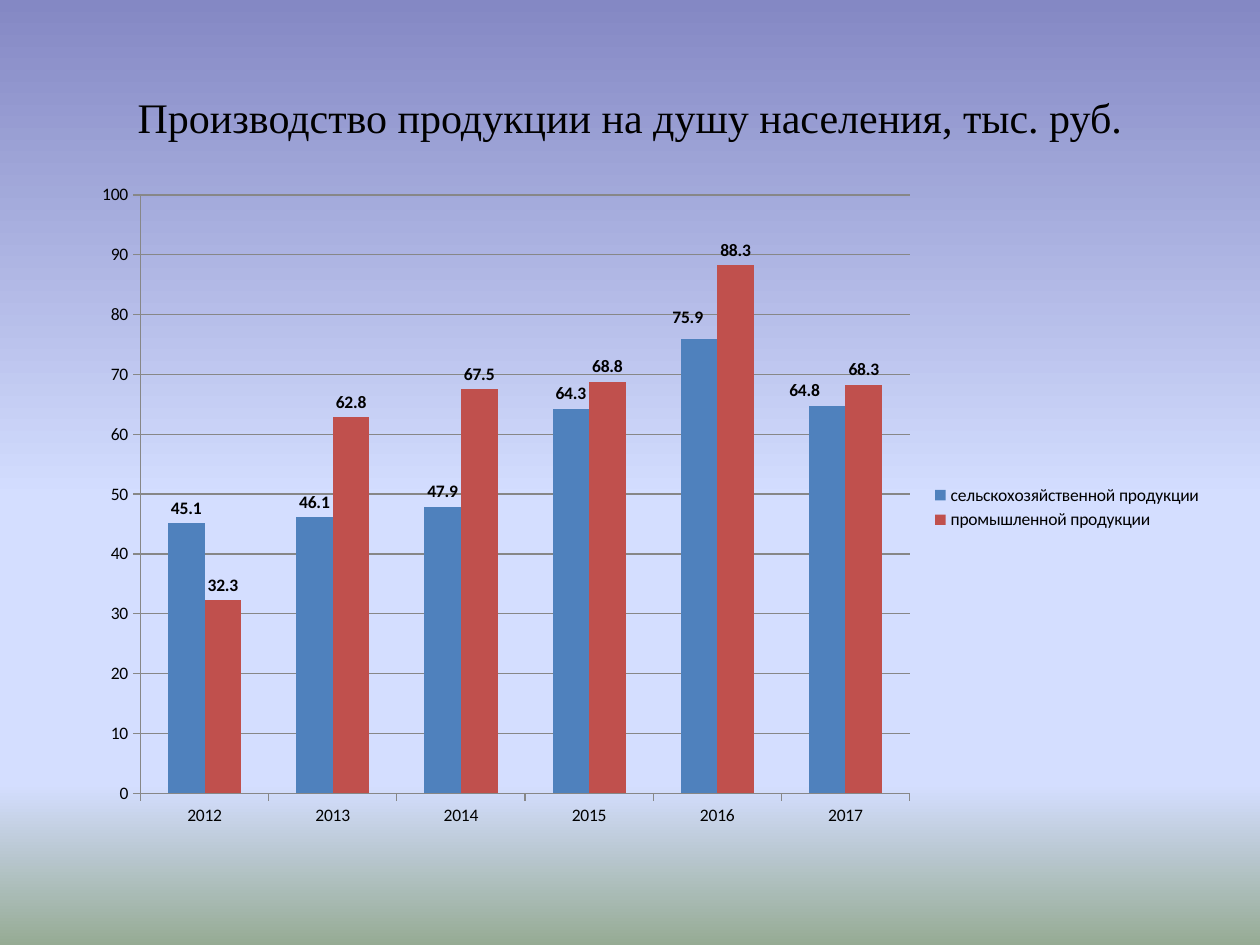
from dataclasses import dataclass, field

import lxml.etree
import pptx
import pptx.chart.data
import pptx.dml.color
import pptx.enum.chart
import pptx.enum.text
import pptx.oxml.ns
import pptx.util

RGBColor = pptx.dml.color.RGBColor
qn = pptx.oxml.ns.qn

PX = 914400 // 126
BLACK = RGBColor(0x00, 0x00, 0x00)
BLUE = RGBColor(0x4F, 0x81, 0xBD)
RED = RGBColor(0xC0, 0x50, 0x4D)
GRAY = RGBColor(0x87, 0x87, 0x87)
SKY = RGBColor(0x84, 0x88, 0xC4)
HAZE = RGBColor(0xD4, 0xDE, 0xFF)
GRASS = RGBColor(0x96, 0xAB, 0x94)
BACKGROUND_STOPS = [(0, SKY), (53, HAZE), (83, HAZE), (100, GRASS)]
YEARS = ["2012", "2013", "2014", "2015", "2016", "2017"]


@dataclass
class Box:
    left: int
    top: int
    width: int
    height: int

    def emu(self) -> list[int]:
        return [side * PX for side in (self.left, self.top, self.width, self.height)]


@dataclass
class Production:
    name: str
    values: list[float]
    color: RGBColor
    label_shifts: dict[int, tuple[float, float]] = field(default_factory=dict)


TITLE_BOX = Box(63, 38, 1134, 157)
CHART_BOX = Box(84, 175, 1131, 665)
PRODUCTION = [
    Production("сельскохозяйственной продукции", [45.1, 46.1, 47.9, 64.3, 75.9, 64.8],
               BLUE, {4: (-0.01, -0.01), 5: (-0.02, 0)}),
    Production("промышленной продукции", [32.3, 62.8, 67.5, 68.8, 88.3, 68.3], RED),
]


def paint_background(page) -> None:
    fill = page.background.fill
    fill.gradient()
    fill.gradient_angle = 270
    stops = page.background._cSld.find(".//" + qn("a:gsLst"))
    for stop in list(stops):
        stops.remove(stop)
    for percent, color in BACKGROUND_STOPS:
        stop = lxml.etree.SubElement(stops, qn("a:gs"), pos=str(percent * 1000))
        lxml.etree.SubElement(stop, qn("a:srgbClr"), val=str(color))


def add_title(page, box: Box, text: str) -> None:
    frame = page.shapes.add_textbox(*box.emu()).text_frame
    frame.word_wrap = True
    frame.vertical_anchor = pptx.enum.text.MSO_ANCHOR.MIDDLE
    para = frame.paragraphs[0]
    para.alignment = pptx.enum.text.PP_ALIGN.CENTER
    span = para.add_run()
    span.text = text
    span.font.name = "Times New Roman"
    span.font.size = pptx.util.Pt(24)
    span.font.color.rgb = BLACK


def add_layout(parent, index: int, **settings) -> None:
    """Insert a manual chart layout among the children of parent."""
    for old in parent.findall(qn("c:layout")):
        parent.remove(old)
    layout = lxml.etree.Element(qn("c:layout"))
    manual = lxml.etree.SubElement(layout, qn("c:manualLayout"))
    for name, value in settings.items():
        lxml.etree.SubElement(manual, qn("c:" + name), val=str(value))
    parent.insert(index, layout)


def style_font(font, bold: bool = False) -> None:
    font.name = "Calibri"
    font.size = pptx.util.Pt(10)
    font.bold = bold
    font.color.rgb = BLACK


def style_line(line) -> None:
    line.color.rgb = GRAY
    line.width = pptx.util.Pt(0.75)


def style_series(series, production: Production) -> None:
    series.format.fill.solid()
    series.format.fill.fore_color.rgb = production.color
    series.invert_if_negative = False
    outside = pptx.enum.chart.XL_LABEL_POSITION.OUTSIDE_END
    labels = series.data_labels
    labels.show_value = True
    labels.position = outside
    style_font(labels.font, bold=True)
    # Labels nudged away from the neighbouring column
    for index, (x, y) in production.label_shifts.items():
        label = series.points[index].data_label
        style_font(label.font, bold=True)
        label.position = outside
    for element, (x, y) in zip(labels._element.findall(qn("c:dLbl")),
                               production.label_shifts.values()):
        add_layout(element, 1, x=x, y=y)


def add_production_chart(page, box: Box) -> None:
    data = pptx.chart.data.CategoryChartData()
    data.categories = YEARS
    for production in PRODUCTION:
        data.add_series(production.name, production.values)
    kind = pptx.enum.chart.XL_CHART_TYPE.COLUMN_CLUSTERED
    chart = page.shapes.add_chart(kind, *box.emu(), data).chart
    chart.has_title = False
    style_font(chart.font)

    # Columns
    plot = chart.plots[0]
    plot.gap_width = 150
    plot.overlap = 0
    plot.vary_by_categories = False
    for series, production in zip(plot.series, PRODUCTION):
        style_series(series, production)

    # Axes and gridlines
    for axis in (chart.category_axis, chart.value_axis):
        axis.major_tick_mark = pptx.enum.chart.XL_TICK_MARK.OUTSIDE
        axis.minor_tick_mark = pptx.enum.chart.XL_TICK_MARK.NONE
        style_line(axis.format.line)
    value_axis = chart.value_axis
    value_axis.minimum_scale = 0
    value_axis.maximum_scale = 100
    value_axis.major_unit = 10
    value_axis.has_major_gridlines = True
    style_line(value_axis.major_gridlines.format.line)

    # Legend and plot area
    chart.has_legend = True
    chart.legend.position = pptx.enum.chart.XL_LEGEND_POSITION.RIGHT
    chart.legend.include_in_layout = False
    plot_area = chart._chartSpace.find(".//" + qn("c:plotArea"))
    add_layout(plot_area, 0, layoutTarget="inner", xMode="edge", yMode="edge",
               x=0.05, y=0.03, w=0.68, h=0.9)


def main() -> None:
    deck = pptx.Presentation()
    deck.slide_width = 1260 * PX
    deck.slide_height = 945 * PX
    page = deck.slides.add_slide(deck.slide_layouts[6])
    paint_background(page)
    add_title(page, TITLE_BOX, "Производство продукции на душу населения, тыс. руб.")
    add_production_chart(page, CHART_BOX)
    deck.save("out.pptx")


if __name__ == "__main__":
    main()
